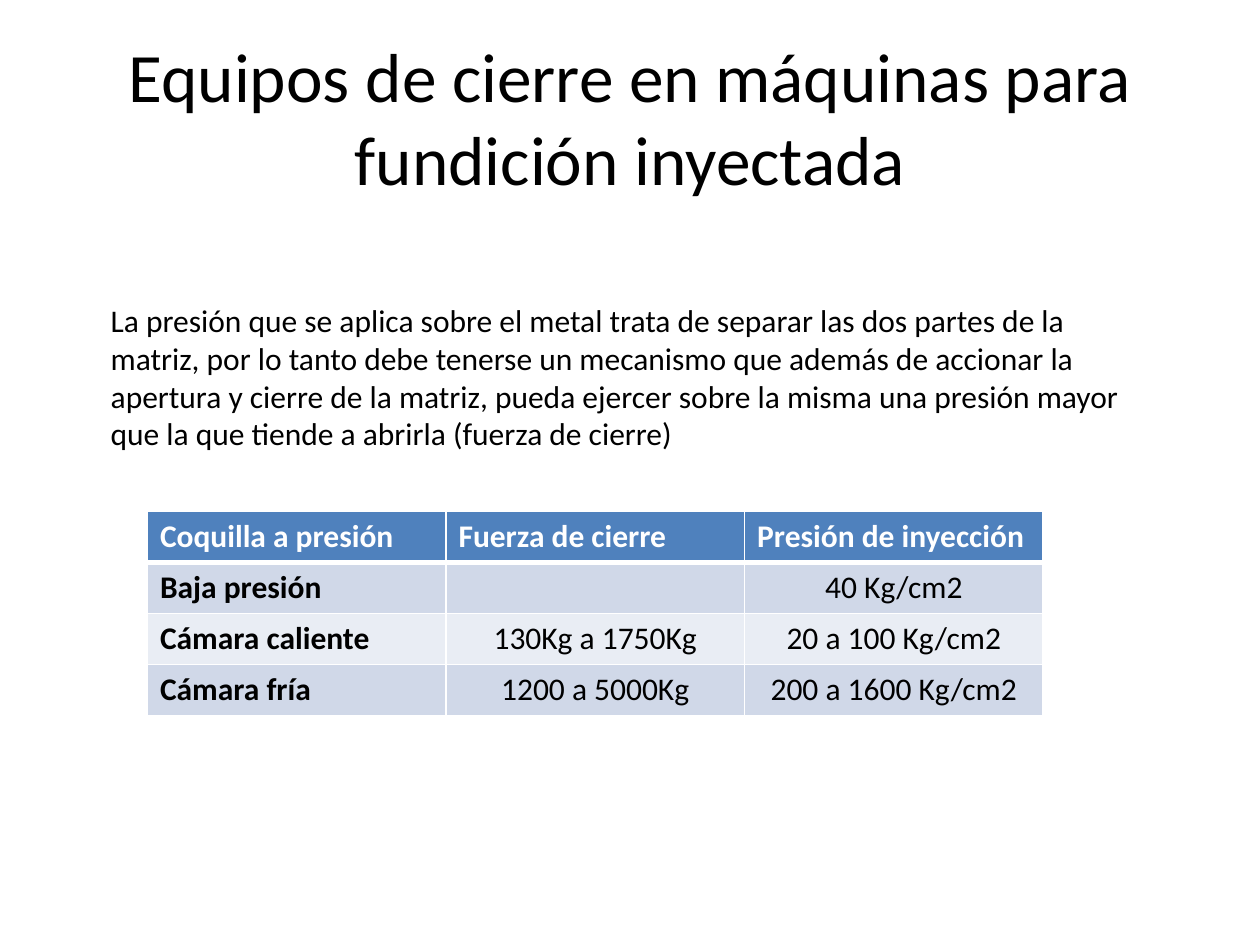
from dataclasses import dataclass

from lxml.etree import SubElement
from pptx import Presentation
from pptx.dml.color import RGBColor
from pptx.enum.text import MSO_ANCHOR, MSO_AUTO_SIZE, PP_ALIGN
from pptx.oxml.ns import qn
from pptx.util import Inches, Pt


@dataclass(frozen=True)
class Theme:
    font: str = "Calibri"
    title_size: float = 39.6
    body_size: float = 18
    text: str = "000000"
    light: str = "FFFFFF"
    header: str = "4F81BD"
    bands: tuple = ("D0D8E8", "E9EDF4")
    border: float = 1
    header_border: float = 3


THEME = Theme()

TITLE = "Equipos de cierre en máquinas para fundición inyectada"
EXPLANATION = (
    "La presión que se aplica sobre el metal trata de separar las dos partes de la "
    "matriz, por lo tanto debe tenerse un mecanismo que además de accionar la "
    "apertura y cierre de la matriz, pueda ejercer sobre la misma una presión mayor "
    "que la que tiende a abrirla (fuerza de cierre)"
)
PRESSURES = [
    ("Coquilla a presión", "Fuerza de cierre", "Presión de inyección"),
    ("Baja presión", "", "40 Kg/cm2"),
    ("Cámara caliente", "130Kg a 1750Kg", "20 a 100 Kg/cm2"),
    ("Cámara fría", "1200 a 5000Kg", "200 a 1600 Kg/cm2"),
]


def write_text(frame, text, size=THEME.body_size, color=THEME.text, bold=False,
               align=PP_ALIGN.LEFT):
    para = frame.paragraphs[0]
    para.alignment = align
    para.font.size = Pt(size)
    if text:
        span = para.add_run()
        span.text = text
        span.font.name = THEME.font
        span.font.size = Pt(size)
        span.font.bold = bold
        span.font.color.rgb = RGBColor.from_string(color)


def add_title(page, text):
    title = page.shapes.title
    title.left, title.top = Inches(0.5), Inches(0.3)
    title.width, title.height = Inches(9), Inches(1.25)
    frame = title.text_frame
    frame.word_wrap = True
    frame.auto_size = MSO_AUTO_SIZE.NONE
    frame.vertical_anchor = MSO_ANCHOR.MIDDLE
    write_text(frame, text, size=THEME.title_size, align=PP_ALIGN.CENTER)


def add_explanation(page, text):
    box = page.shapes.add_textbox(Inches(0.78), Inches(2.34), Inches(8.52), Inches(1.62))
    box.text_frame.word_wrap = True
    box.text_frame.auto_size = MSO_AUTO_SIZE.SHAPE_TO_FIT_TEXT
    write_text(box.text_frame, text)


def set_borders(cell, top, bottom):
    properties = cell._tc.get_or_add_tcPr()
    widths = {"L": THEME.border, "R": THEME.border, "T": top, "B": bottom}
    for side, width in widths.items():
        line = SubElement(properties, qn(f"a:ln{side}"), w=str(Pt(width)))
        fill = SubElement(line, qn("a:solidFill"))
        SubElement(fill, qn("a:srgbClr"), val=THEME.light)


def format_cell(cell, text, row, column):
    is_header = row == 0
    # The thick rule is shared by the header and the row below it
    set_borders(cell,
                top=THEME.header_border if row == 1 else THEME.border,
                bottom=THEME.header_border if is_header else THEME.border)
    color = THEME.header if is_header else THEME.bands[(row - 1) % 2]
    cell.fill.solid()
    cell.fill.fore_color.rgb = RGBColor.from_string(color)
    write_text(cell.text_frame, text,
               color=THEME.light if is_header else THEME.text,
               bold=is_header or column == 0,
               align=PP_ALIGN.LEFT if is_header or column == 0 else PP_ALIGN.CENTER)


def add_pressure_table(page, records):
    table = page.shapes.add_table(len(records), len(records[0]), Inches(1.17),
                                  Inches(4.06), Inches(7.11), Inches(1.62)).table
    for row, record in enumerate(records):
        for column, text in enumerate(record):
            format_cell(table.cell(row, column), text, row, column)


def main():
    deck = Presentation()
    deck.slide_width, deck.slide_height = Inches(10), Inches(7.5)
    page = deck.slides.add_slide(deck.slide_layouts.get_by_name("Title Only"))

    # Heading and explanation
    add_title(page, TITLE)
    add_explanation(page, EXPLANATION)

    # Closing forces and injection pressures
    add_pressure_table(page, PRESSURES)

    deck.save("out.pptx")


if __name__ == "__main__":
    main()
